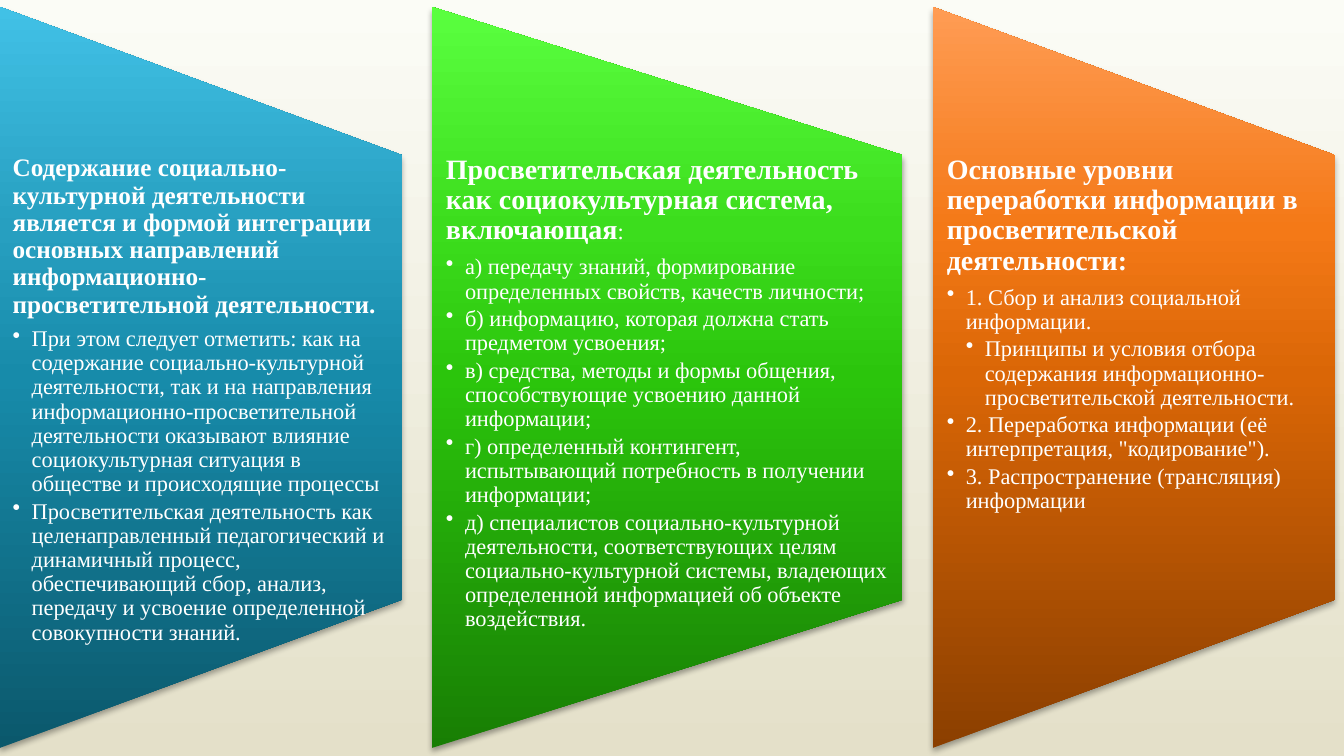
from lxml import etree
from pptx import Presentation
from pptx.dml.color import RGBColor
from pptx.enum.shapes import MSO_SHAPE
from pptx.enum.text import MSO_ANCHOR
from pptx.oxml.ns import qn
from pptx.util import Cm, Pt

TRAPEZOID = MSO_SHAPE.FLOWCHART_MANUAL_OPERATION
TOP = MSO_ANCHOR.TOP

# Each item is (level, text); a heading may end in a plain-weight tail.
PANELS = [
    {
        "width": 10.13, "inset": 0.32, "heading_size": 18, "colours": "blue",
        "heading": "Содержание социально-культурной деятельности является и формой интеграции "
                   "основных направлений информационно-просветительной деятельности.",
        "tail": "",
        "items": [
            (1, "При этом следует отметить: как на содержание социально-культурной деятельности, "
                "так и на направления информационно-просветительной деятельности оказывают влияние "
                "социокультурная ситуация в обществе и происходящие процессы"),
            (1, "Просветительская деятельность как целенаправленный педагогический и динамичный "
                "процесс, обеспечивающий сбор, анализ, передачу и усвоение определенной "
                "совокупности знаний."),
        ],
    },
    {
        "width": 11.86, "inset": 0.35, "heading_size": 20, "colours": "green",
        "heading": "Просветительская деятельность как социокультурная система, включающая",
        "tail": ":",
        "items": [
            (1, "а) передачу знаний, формирование определенных свойств, качеств личности;"),
            (1, "б) информацию, которая должна стать предметом усвоения;"),
            (1, "в) средства, методы и формы общения, способствующие усвоению данной информации;"),
            (1, "г) определенный контингент, испытывающий потребность в получении информации;"),
            (1, "д) специалистов социально-культурной деятельности, соответствующих целям "
                "социально-культурной системы, владеющих определенной информацией об объекте "
                "воздействия."),
        ],
    },
    {
        "width": 10.13, "inset": 0.35, "heading_size": 20, "colours": "orange",
        "heading": "Основные уровни переработки информации в просветительской деятельности:",
        "tail": "",
        "items": [
            (1, "1. Сбор и анализ социальной информации."),
            (2, "Принципы и условия отбора содержания информационно-просветительской "
                "деятельности."),
            (1, '2. Переработка информации (её интерпретация, "кодирование").'),
            (1, "3. Распространение (трансляция) информации"),
        ],
    },
]

THEME = {
    "font": "Times New Roman",
    "text": RGBColor(0xFF, 0xFF, 0xFF),
    "item_size": 16,
    "background": [(0, "FBFCF6"), (100, "E4E0C9")],
    "blue": [(0, "0B586C"), (50, "178BAA"), (70, "279FC0"), (100, "41C1E6")],
    "green": [(0, "187E04"), (50, "2BC50C"), (70, "3CDD1D"), (100, "5AFF3F")],
    "orange": [(0, "8B3F00"), (50, "DA6606"), (70, "F47917"), (100, "FF9C54")],
}

SLIDE_WIDTH, SLIDE_HEIGHT = 33.87, 19.05
PANEL_GAP = 0.76
PANEL_HEIGHT = 18.67
PANEL_MIDDLE = 9.51
TEXT_TOP, TEXT_HEIGHT = 3.91, 11.2
INDENT = 0.48


def add_xml(parent, tag, **attributes):
    return etree.SubElement(parent, qn(tag), attributes)


def paint_gradient(fill, owner, stops, angle):
    """Fill owner with stops; the angle runs clockwise and ignores rotation."""
    fill.gradient()
    gradient = owner.find(".//" + qn("a:gradFill"))
    for child in list(gradient):
        gradient.remove(child)
    gradient.set("rotWithShape", "0")
    stop_list = add_xml(gradient, "a:gsLst")
    for position, colour in stops:
        stop = add_xml(stop_list, "a:gs", pos=str(position * 1000))
        add_xml(stop, "a:srgbClr", val=colour)
    add_xml(gradient, "a:lin", ang=str(angle * 60000), scaled="0")


def add_soft_shadow(shape):
    shape.shadow.inherit = False
    effects = shape._element.spPr.find(qn("a:effectLst"))
    shadow = add_xml(effects, "a:outerShdw", blurRad=str(Pt(4)), dist=str(Pt(3)),
                     dir=str(90 * 60000), rotWithShape="0")
    add_xml(add_xml(shadow, "a:srgbClr", val="000000"), "a:alpha", val="35000")


def add_panel_shape(slide, left, panel):
    """Place the trapezoid so that a quarter turn lands it on its column."""
    width = panel["width"]
    shape = slide.shapes.add_shape(
        TRAPEZOID, Cm(left + (width - PANEL_HEIGHT) / 2), Cm(PANEL_MIDDLE - width / 2),
        Cm(PANEL_HEIGHT), Cm(width))
    shape.rotation = 270
    paint_gradient(shape.fill, shape._element, THEME[panel["colours"]], 270)
    shape.line.fill.background()
    add_soft_shadow(shape)


def format_paragraph(paragraph, level, space_after):
    paragraph.level = level
    paragraph.line_spacing = 0.9
    properties = paragraph._p.get_or_add_pPr()
    add_xml(add_xml(properties, "a:spcAft"), "a:spcPct", val=str(space_after * 1000))
    if level:
        properties.set("marL", str(Cm(INDENT * level)))
        properties.set("indent", str(-Cm(INDENT)))
        add_xml(properties, "a:buChar", char="•")


def format_run(run, size, bold=False):
    run.font.name = THEME["font"]
    run.font.size = Pt(size)
    run.font.bold = bold
    run.font.color.rgb = THEME["text"]


def add_panel_text(slide, left, panel):
    box = slide.shapes.add_textbox(Cm(left), Cm(TEXT_TOP), Cm(panel["width"]), Cm(TEXT_HEIGHT))
    frame = box.text_frame
    frame.word_wrap = True
    frame.vertical_anchor = TOP
    frame.margin_left = frame.margin_right = Cm(panel["inset"])
    frame.margin_top = frame.margin_bottom = 0

    heading = frame.paragraphs[0]
    heading.text = panel["heading"]
    format_paragraph(heading, 0, 35)
    format_run(heading.runs[0], panel["heading_size"], bold=True)
    if panel["tail"]:
        tail = heading.add_run()
        tail.text = panel["tail"]
        format_run(tail, THEME["item_size"])

    for level, text in panel["items"]:
        item = frame.add_paragraph()
        item.text = text
        format_paragraph(item, level, 15)
        format_run(item.runs[0], THEME["item_size"])


def main():
    presentation = Presentation()
    presentation.slide_width = Cm(SLIDE_WIDTH)
    presentation.slide_height = Cm(SLIDE_HEIGHT)
    slide = presentation.slides.add_slide(presentation.slide_layouts[6])
    paint_gradient(slide.background.fill, slide._element, THEME["background"], 90)

    left = 0
    for panel in PANELS:
        add_panel_shape(slide, left, panel)
        add_panel_text(slide, left, panel)
        left += panel["width"] + PANEL_GAP

    presentation.save("out.pptx")


if __name__ == "__main__":
    main()
